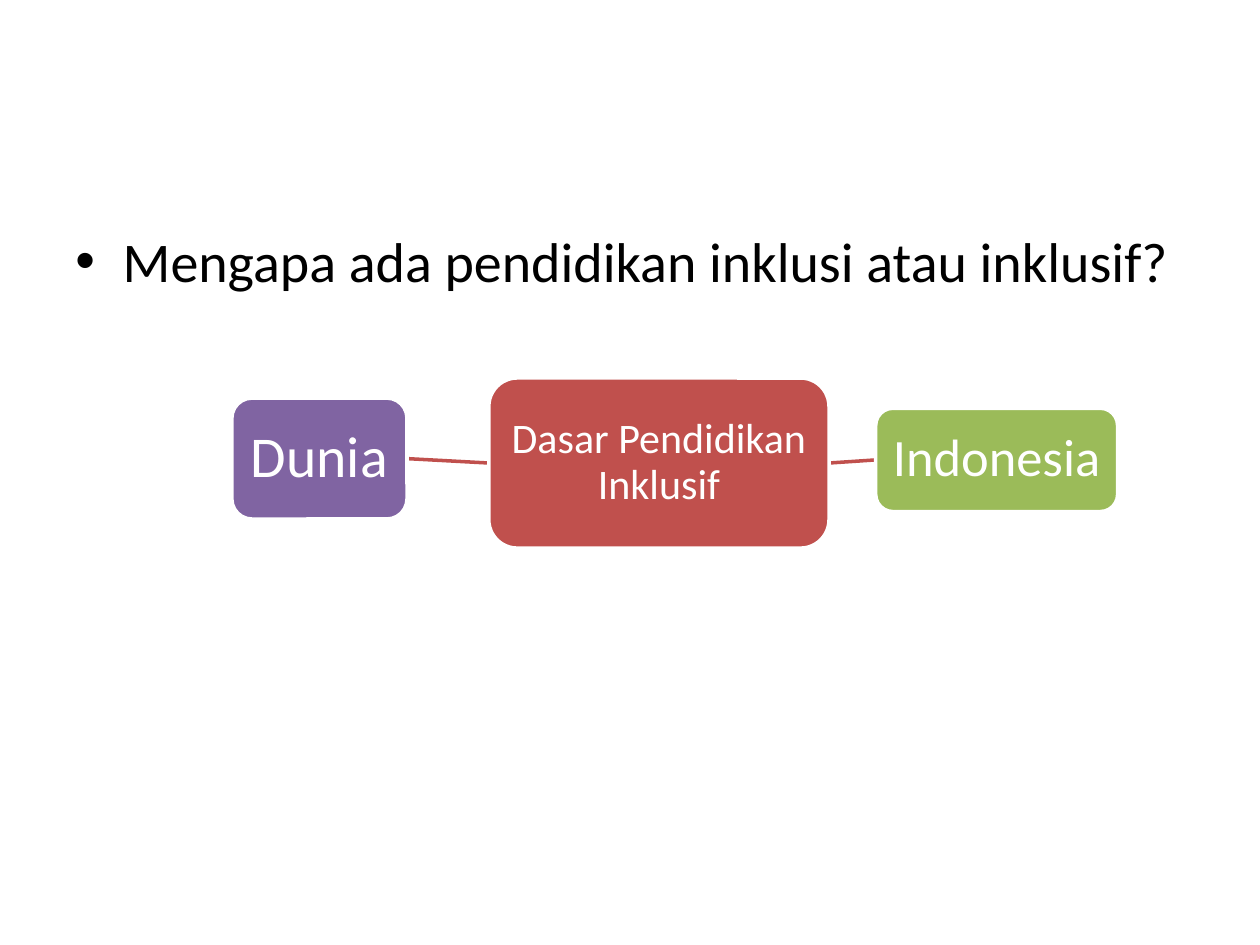
from dataclasses import dataclass

from lxml.etree import SubElement
from pptx import Presentation
from pptx.dml.color import RGBColor
from pptx.enum.shapes import MSO_CONNECTOR, MSO_SHAPE
from pptx.enum.text import MSO_ANCHOR, PP_ALIGN
from pptx.oxml.ns import qn
from pptx.slide import Slide
from pptx.text.text import Font
from pptx.util import Inches, Pt

COLORS = {
    "white": "FFFFFF",
    "black": "000000",
    "red": "C0504D",
    "green": "9BBB59",
    "purple": "8064A2",
}
COLUMNS, ROWS = 100, 75
SLIDE_WIDTH, SLIDE_HEIGHT = Inches(10), Inches(7.5)


@dataclass(frozen=True)
class Node:
    label: str
    column: float
    row: float
    columns: float
    rows: float
    size: int
    inset: float
    color: str

    @property
    def right(self) -> float:
        return self.column + self.columns

    @property
    def middle(self) -> float:
        return self.row + self.rows / 2


CENTER = Node("Dasar Pendidikan Inklusif", 38.8, 30, 27, 13.5, 24, 0.7, "red")
INDONESIA = Node("Indonesia", 69.5, 32.4, 19.2, 8.2, 30, 0.8, "green")
DUNIA = Node("Dunia", 18.4, 31.6, 13.9, 9.6, 33, 0.9, "purple")


def across(columns: float) -> int:
    return round(SLIDE_WIDTH * columns / COLUMNS)


def down(rows: float) -> int:
    return round(SLIDE_HEIGHT * rows / ROWS)


def rgb(name: str) -> RGBColor:
    return RGBColor.from_string(COLORS[name])


def set_font(font: Font, size: int, color: str) -> None:
    font.name = "Calibri"
    font.size = Pt(size)
    font.color.rgb = rgb(color)


def add_question(slide: Slide, text: str) -> None:
    box = slide.shapes.add_textbox(across(5), down(17.5), across(90), down(49.5))
    box.text_frame.word_wrap = True
    paragraph = box.text_frame.paragraphs[0]
    paragraph.text = text
    properties = paragraph._p.get_or_add_pPr()
    hanging = across(3.75)
    properties.set("marL", str(hanging))
    properties.set("indent", str(-hanging))
    SubElement(properties, qn("a:buFont"), typeface="Arial")
    SubElement(properties, qn("a:buChar"), char="•")
    set_font(paragraph.font, 32, "black")


def add_node(slide: Slide, node: Node) -> None:
    shape = slide.shapes.add_shape(
        MSO_SHAPE.ROUNDED_RECTANGLE,
        across(node.column), down(node.row), across(node.columns), down(node.rows),
    )
    shape.shadow.inherit = False
    shape.fill.solid()
    shape.fill.fore_color.rgb = rgb(node.color)
    shape.line.color.rgb = rgb("white")
    shape.line.width = Pt(2)
    frame = shape.text_frame
    frame.word_wrap = True
    frame.vertical_anchor = MSO_ANCHOR.MIDDLE
    frame.margin_left = frame.margin_right = across(node.inset)
    frame.margin_top = frame.margin_bottom = down(node.inset)
    paragraph = frame.paragraphs[0]
    paragraph.text = node.label
    paragraph.alignment = PP_ALIGN.CENTER
    paragraph.line_spacing = 0.9
    set_font(paragraph.font, node.size, "white")


def add_link(slide: Slide, left: Node, right: Node) -> None:
    connector = slide.shapes.add_connector(
        MSO_CONNECTOR.STRAIGHT,
        across(left.right), down(left.middle), across(right.column), down(right.middle),
    )
    connector.line.color.rgb = rgb("red")
    connector.line.width = Pt(2)
    SubElement(connector._element.spPr, qn("a:effectLst"))


def main() -> None:
    presentation = Presentation()
    presentation.slide_width = SLIDE_WIDTH
    presentation.slide_height = SLIDE_HEIGHT
    slide = presentation.slides.add_slide(presentation.slide_layouts[6])
    add_question(slide, "Mengapa ada pendidikan inklusi atau inklusif?")
    add_link(slide, CENTER, INDONESIA)
    add_link(slide, DUNIA, CENTER)
    for node in (CENTER, INDONESIA, DUNIA):
        add_node(slide, node)
    presentation.save("out.pptx")


if __name__ == "__main__":
    main()
